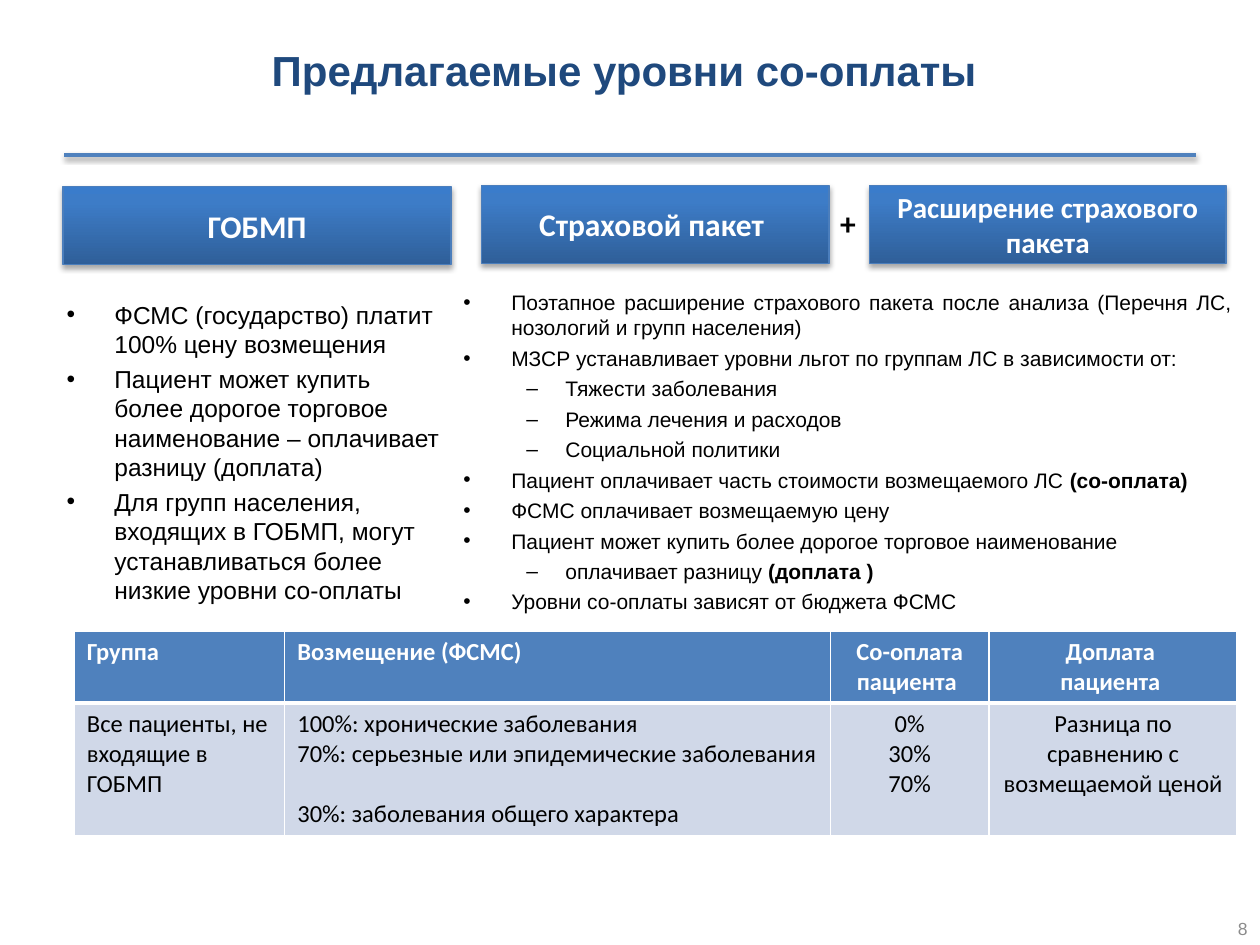
from lxml import etree
from pptx import Presentation
from pptx.dml.color import RGBColor
from pptx.enum.shapes import MSO_CONNECTOR, MSO_SHAPE
from pptx.enum.text import MSO_ANCHOR, PP_ALIGN
from pptx.oxml import parse_xml
from pptx.oxml.ns import nsdecls, qn
from pptx.util import Inches, Pt

LEFT, CENTER, RIGHT, JUSTIFY = (PP_ALIGN.LEFT, PP_ALIGN.CENTER,
                                PP_ALIGN.RIGHT, PP_ALIGN.JUSTIFY)
TOP, MIDDLE, BOTTOM = MSO_ANCHOR.TOP, MSO_ANCHOR.MIDDLE, MSO_ANCHOR.BOTTOM
RECTANGLE, STRAIGHT = MSO_SHAPE.RECTANGLE, MSO_CONNECTOR.STRAIGHT

COLORS = {
    "title": "1F497D", "accent": "4F81BD", "edge": "4B7EBC",
    "dark": "2F5F99", "mid": "3D7CC7", "light": "3A7CCB",
    "row": "D0D8E8", "white": "FFFFFF", "black": "000000", "page": "8C8C8C",
}

# Grid of 100 columns by 75 rows; every box is (column, row, columns, rows)
UNIT = Inches(0.1)

# (level, plain text, bold ending)
STATE_POINTS = [
    (0, "ФСМС (государство) платит 100% цену возмещения", ""),
    (0, "Пациент может купить более дорогое торговое наименование – "
        "оплачивает разницу (доплата)", ""),
    (0, "Для групп населения, входящих в ГОБМП, могут устанавливаться "
        "более низкие уровни со-оплаты", ""),
]
INSURANCE_POINTS = [
    (0, "Поэтапное расширение страхового пакета после анализа "
        "(Перечня ЛС, нозологий и групп населения)", ""),
    (0, "МЗСР устанавливает уровни льгот по группам ЛС в зависимости от:", ""),
    (1, "Тяжести заболевания", ""),
    (1, "Режима лечения и расходов", ""),
    (1, "Социальной политики", ""),
    (0, "Пациент оплачивает часть стоимости возмещаемого ЛС ", "(со-оплата)"),
    (0, "ФСМС оплачивает возмещаемую цену", ""),
    (0, "Пациент может купить более дорогое торговое наименование", ""),
    (1, "оплачивает разницу ", "(доплата )"),
    (0, "Уровни со-оплаты зависят от бюджета ФСМС", ""),
]
# Each cell is a list of paragraphs
PAYMENT_ROWS = [
    [["Группа"], ["Возмещение (ФСМС)"], ["Со-оплата пациента "],
     ["Доплата \nпациента "]],
    [["Все пациенты, не входящие в ГОБМП"],
     ["100%: хронические заболевания",
      "70%: серьезные или эпидемические заболевания",
      "30%: заболевания общего характера"],
     ["0%", "30%", "70%"],
     ["Разница по сравнению с возмещаемой ценой "]],
]
PAYMENT_COLUMNS = [16.7, 43.3, 12.6, 19.7]
PAYMENT_HEIGHTS = [5.7, 10.5]
# (marker, left margin, hanging indent) by level
BULLETS = [("•", 0.38, -0.38), ("–", 0.81, -0.31)]


def grid(box):
    return [int(length * UNIT) for length in box]


def rgb(name):
    return RGBColor.from_string(COLORS[name])


def add_run(paragraph, text, size, color, bold=False, face="Arial"):
    run = paragraph.add_run()
    run.text = text
    font = run.font
    font.size, font.bold, font.name = Pt(size), bold, face
    font.color.rgb = rgb(color)


def add_label(slide, box, text, size, color, align=LEFT, anchor=TOP, **style):
    frame = slide.shapes.add_textbox(*grid(box)).text_frame
    frame.word_wrap = True
    frame.vertical_anchor = anchor
    frame.paragraphs[0].alignment = align
    add_run(frame.paragraphs[0], text, size, color, **style)


def cast_shadow(shape, distance, opacity):
    shape._element.spPr.append(parse_xml(
        f'<a:effectLst {nsdecls("a")}><a:outerShdw blurRad="{Pt(3.1)}" '
        f'dist="{Pt(distance)}" dir="5400000" rotWithShape="0">'
        f'<a:srgbClr val="{COLORS["black"]}"><a:alpha val="{opacity}000"/>'
        '</a:srgbClr></a:outerShdw></a:effectLst>'))


def add_heading(slide, title_box, rule_box):
    add_label(slide, title_box, "Предлагаемые уровни со-оплаты ", 24, "title",
              CENTER, bold=True)
    left, top, width, height = grid(rule_box)
    rule = slide.shapes.add_connector(STRAIGHT, left, top, left + width, top + height)
    rule.line.color.rgb = rgb("accent")
    rule.line.width = Pt(2)
    cast_shadow(rule, 1.6, 38)


def add_banner(slide, box, text, size=18):
    banner = slide.shapes.add_shape(RECTANGLE, *grid(box))
    banner.line.color.rgb = rgb("edge")
    banner.line.width = Pt(0.75)
    # Three-stop gradient running upwards
    banner.fill.gradient()
    stops = "".join(
        f'<a:gs pos="{share}000"><a:srgbClr val="{COLORS[name]}"/></a:gs>'
        for share, name in ((0, "dark"), (80, "mid"), (100, "light")))
    gradient = banner._element.spPr.find(qn("a:gradFill"))
    banner._element.spPr.replace(gradient, parse_xml(
        f'<a:gradFill rotWithShape="1" {nsdecls("a")}><a:gsLst>{stops}</a:gsLst>'
        '<a:lin ang="16200000" scaled="0"/></a:gradFill>'))
    cast_shadow(banner, 1.8, 35)
    frame = banner.text_frame
    frame.word_wrap = True
    frame.vertical_anchor = MIDDLE
    frame.paragraphs[0].alignment = CENTER
    add_run(frame.paragraphs[0], text, size, "white", True, "Calibri")


def add_points(slide, box, points, size, align):
    frame = slide.shapes.add_textbox(*grid(box)).text_frame
    frame.word_wrap = True
    for index, (level, text, bold_ending) in enumerate(points):
        paragraph = frame.add_paragraph() if index else frame.paragraphs[0]
        paragraph.alignment = align
        paragraph.level = level
        if index:
            paragraph.space_before = Pt(3)
        marker, margin, hanging = BULLETS[level]
        properties = paragraph._p.get_or_add_pPr()
        properties.set("marL", str(Inches(margin)))
        properties.set("indent", str(Inches(hanging)))
        etree.SubElement(properties, qn("a:buFont")).set("typeface", "Arial")
        etree.SubElement(properties, qn("a:buChar")).set("char", marker)
        add_run(paragraph, text, size, "black")
        if bold_ending:
            add_run(paragraph, bold_ending, size, "black", True)


def set_borders(cell, widths):
    properties = cell._tc.get_or_add_tcPr()
    for position, (side, width) in enumerate(zip("LRTB", widths)):
        properties.insert(position, parse_xml(
            f'<a:ln{side} w="{Pt(width)}" {nsdecls("a")}><a:solidFill>'
            f'<a:srgbClr val="{COLORS["white"]}"/></a:solidFill></a:ln{side}>'))


def add_payment_table(slide, left, top):
    box = (left, top, sum(PAYMENT_COLUMNS), sum(PAYMENT_HEIGHTS))
    table = slide.shapes.add_table(
        len(PAYMENT_ROWS), len(PAYMENT_COLUMNS), *grid(box)).table
    for column, width in zip(table.columns, grid(PAYMENT_COLUMNS)):
        column.width = width
    for row, height in zip(table.rows, grid(PAYMENT_HEIGHTS)):
        row.height = height
    for r, row in enumerate(PAYMENT_ROWS):
        header = r == 0
        for c, paragraphs in enumerate(row):
            cell = table.cell(r, c)
            cell.fill.solid()
            cell.fill.fore_color.rgb = rgb("accent" if header else "row")
            set_borders(cell, (1, 1, 1, 3) if header else (1, 1, 3, 1))
            for index, text in enumerate(paragraphs):
                frame = cell.text_frame
                paragraph = frame.add_paragraph() if index else frame.paragraphs[0]
                paragraph.alignment = CENTER if c > 1 else LEFT
                for part, line in enumerate(text.split("\n")):
                    if part:
                        paragraph.add_line_break()
                    add_run(paragraph, line, 14, "white" if header else "black",
                            header, "Calibri")
    # The last reimbursement rate stands one line apart
    table.cell(1, 1).text_frame.paragraphs[-1].space_before = Pt(17)


def main():
    deck = Presentation()
    deck.slide_width, deck.slide_height = 100 * UNIT, 75 * UNIT
    slide = deck.slides.add_slide(deck.slide_layouts[6])

    add_heading(slide, (5, 3, 90, 8.9), (5.1, 12.3, 89.8, 0))
    # State package
    add_banner(slide, (5, 14.8, 30.8, 6.2), "ГОБМП")
    add_points(slide, (4.3, 23.3, 31.6, 27.6), STATE_POINTS, 14, LEFT)
    # Insurance package and its extension
    add_banner(slide, (38.2, 14.7, 27.6, 6.2), "Страховой пакет ")
    add_label(slide, (65.7, 15.7, 4, 4), "+", 18, "black", bold=True, face="Calibri")
    add_banner(slide, (69, 14.7, 28.3, 6.2), "Расширение страхового пакета", 16.6)
    add_points(slide, (35.8, 22.5, 63, 30.7), INSURANCE_POINTS, 12, JUSTIFY)
    add_payment_table(slide, 5.9, 50.1)
    # Page number
    add_label(slide, (86.2, 71.4, 13.8, 3.6), "8", 10, "page", RIGHT, BOTTOM)
    deck.save("out.pptx")


if __name__ == "__main__":
    main()
